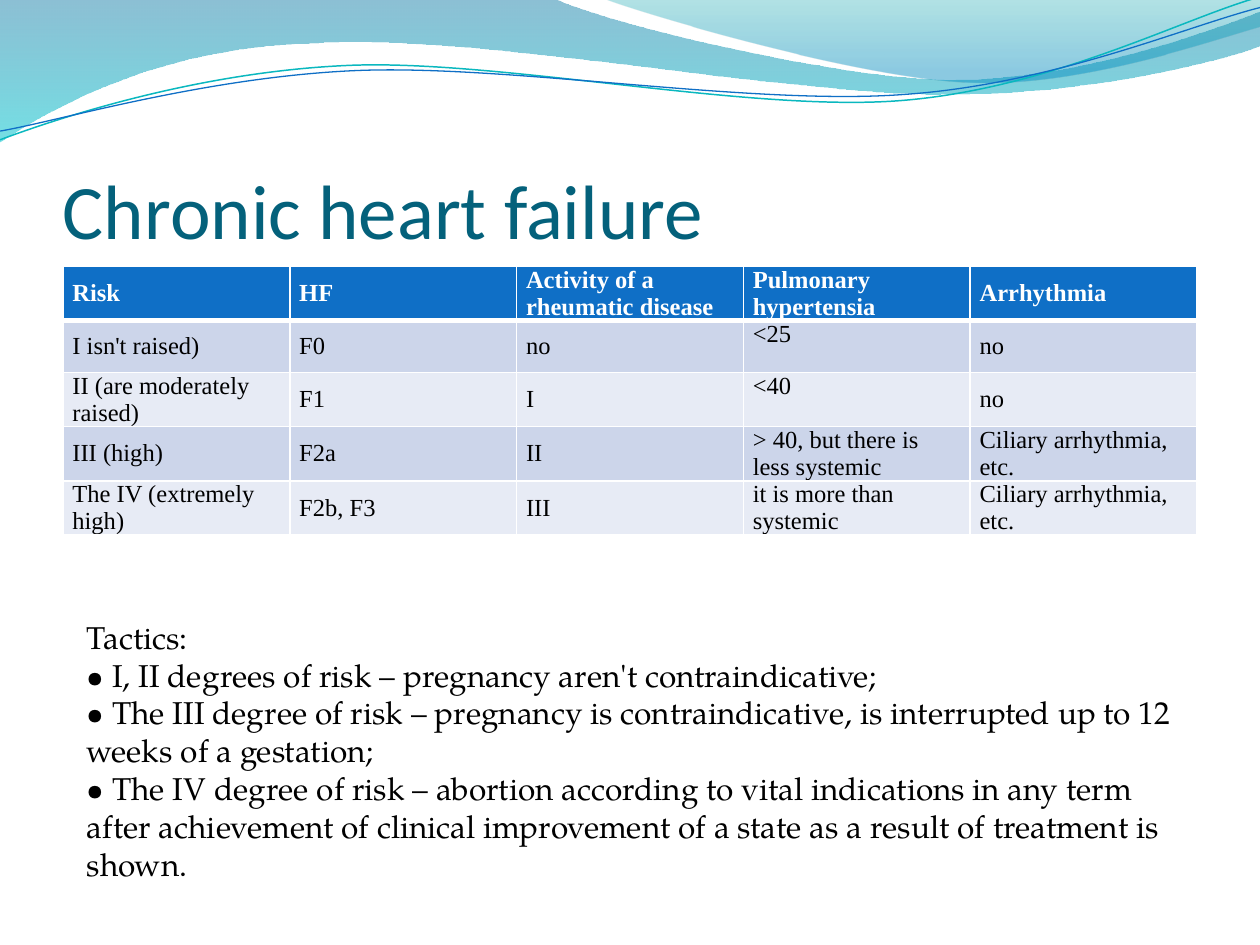
from dataclasses import dataclass

from lxml.etree import SubElement
from pptx import Presentation
from pptx.dml.color import RGBColor as Color
from pptx.enum.text import MSO_ANCHOR as Anchor, MSO_AUTO_SIZE as AutoSize
from pptx.oxml.ns import qn
from pptx.util import Pt


@dataclass(frozen=True)
class Theme:
    title_font: str = "Calibri"
    table_font: str = "Times New Roman"
    body_font: str = "TeX Gyre Pagella"
    title_size: int = 44
    table_size: int = 14
    body_size: int = 18
    title: str = "04617B"
    header: str = "0F6FC6"
    bands: tuple = ("CCD5EA", "E7EBF5")
    light: str = "FFFFFF"
    dark: str = "000000"
    teal_line: str = "0AB8BF"
    blue_line: str = "0F6FC6"
    wide_wave: tuple = ((0, "0074A1", 45), (1, "00C6CF", 55))
    corner_wave: tuple = ((0, "00A1A9", 30), (0.8, "008BBF", 45))


class SlideBuilder:
    """Draw styled elements on one slide, with lengths in points."""

    def __init__(self, slide, theme):
        self.slide = slide
        self.theme = theme

    def style(self, paragraph, name, size, color, bold=False):
        font = paragraph.font
        font.name, font.size, font.bold = name, Pt(size), bold
        font.color.rgb = Color.from_string(color)

    def outline(self, start, steps, close):
        points = [(Pt(step[i]), Pt(step[i + 1])) for step in steps
                  for i in range(0, len(step), 2)]
        builder = self.slide.shapes.build_freeform(*map(Pt, start))
        builder.add_line_segments(points, close=close)
        shape = builder.convert_to_shape()
        shape.shadow.inherit = False
        segments = iter(list(shape._element.spPr.iter(qn("a:lnTo"))))
        for step in steps:
            first, *others = [next(segments) for _ in range(len(step) // 2)]
            if others:
                first.tag = qn("a:cubicBezTo")
            for segment in others:
                first.append(segment[0])
                segment.getparent().remove(segment)
        return shape

    def wave(self, start, steps, stops):
        shape = self.outline(start, steps, True)
        shape.line.fill.background()
        shape.fill.gradient()
        shape.fill.gradient_angle = 270
        for stop, (position, color, _) in zip(shape.fill.gradient_stops, stops):
            stop.position = position
            stop.color.rgb = Color.from_string(color)
        colors = shape._element.spPr.iter(qn("a:srgbClr"))
        for element, (_, _, opacity) in zip(colors, stops):
            SubElement(element, qn("a:alpha"), val=str(opacity * 1000))

    def curve(self, start, steps, color, width):
        shape = self.outline(start, steps, False)
        shape.fill.background()
        shape.line.color.rgb = Color.from_string(color)
        shape.line.width = Pt(width)

    def text(self, box, lines, font, size, color, insets, anchor=Anchor.TOP, grow=False):
        frame = self.slide.shapes.add_textbox(*map(Pt, box)).text_frame
        frame.word_wrap = True
        frame.auto_size = AutoSize.SHAPE_TO_FIT_TEXT if grow else AutoSize.NONE
        frame.vertical_anchor = anchor
        (frame.margin_left, frame.margin_top,
         frame.margin_right, frame.margin_bottom) = map(Pt, insets)
        frame.text = "\n".join(lines)
        for paragraph in frame.paragraphs:
            self.style(paragraph, font, size, color)

    def borders(self, cell, top, bottom):
        properties = cell._tc.get_or_add_tcPr()
        for side, width in (("L", 1), ("R", 1), ("T", top), ("B", bottom)):
            line = SubElement(properties, qn(f"a:ln{side}"), w=str(Pt(width)))
            fill = SubElement(line, qn("a:solidFill"))
            SubElement(fill, qn("a:srgbClr"), val=self.theme.light)

    def table(self, box, rows, top_column):
        theme = self.theme
        shape = self.slide.shapes.add_table(len(rows), len(rows[0]), *map(Pt, box))
        for row_index, row in enumerate(rows):
            header = row_index == 0
            fill = theme.header if header else theme.bands[(row_index - 1) % 2]
            for column_index, value in enumerate(row):
                cell = shape.table.cell(row_index, column_index)
                self.borders(cell, 3 if row_index == 1 else 1, 3 if header else 1)
                cell.fill.solid()
                cell.fill.fore_color.rgb = Color.from_string(fill)
                cell.margin_left = cell.margin_right = Pt(5.4)
                cell.margin_top = cell.margin_bottom = 0
                cell.vertical_anchor = Anchor.TOP if column_index == top_column else Anchor.MIDDLE
                cell.text = value
                self.style(cell.text_frame.paragraphs[0], theme.table_font, theme.table_size,
                           theme.light if header else theme.dark, header)


RISKS = [
    ("Risk", "HF", "Activity of a rheumatic disease", "Pulmonary hypertensia", "Arrhythmia"),
    ("I isn't raised)", "F0", "no", "˂25", "no"),
    ("II (are moderately raised)", "F1", "I", "˂40", "no"),
    ("III (high)", "F2a", "II", "> 40, but there is less systemic", "Ciliary arrhythmia, etc."),
    ("The IV (extremely high)", "F2b, F3", "III", "it is more than systemic",
     "Ciliary arrhythmia, etc."),
]
TACTICS = [
    "Tactics:",
    "• I, II degrees of risk – pregnancy aren't contraindicative;",
    "• The III degree of risk – pregnancy is contraindicative, is interrupted up to 12 weeks "
    "of a gestation;",
    "• The IV degree of risk – abortion according to vital indications in any term after "
    "achievement of clinical improvement of a state as a result of treatment is shown.",
]


def main():
    presentation = Presentation()
    presentation.slide_width, presentation.slide_height = Pt(720), Pt(540)
    theme = Theme()
    builder = SlideBuilder(presentation.slides.add_slide(presentation.slide_layouts[6]), theme)
    builder.wave((0, 0), [
        (316.8, -0.7),
        (342.7, 12.2, 478.1, 45.4, 545.8, 45.4),
        (614.2, 45.4, 689.8, 18.7, 720, 6.5),
        (720.7, 25.9),
        (707.8, 31.7, 626.4, 54.7, 537.1, 54),
        (447.8, 54, 275, 20.2, 185, 24.5),
        (92.9, 25.9, 33.1, 59.8, -0.7, 81.4),
    ], theme.wide_wave)
    builder.wave((344.9, -0.7), [
        (366.5, 7.9, 491, 44.6, 553.7, 46.8),
        (616.3, 49.7, 691.9, 23, 720, 15.1),
        (720, 0),
    ], theme.corner_wave)
    builder.curve((0, 79.9), [
        (34.6, 67, 113.8, 41, 199.4, 37.4),
        (284.4, 33.8, 427, 64.1, 513.4, 57.6),
        (599.8, 51.1, 675.4, 10.8, 718.6, -1.4),
    ], theme.teal_line, 0.85)
    builder.curve((0, 74.9), [
        (33.8, 69.1, 118.1, 43.9, 203.8, 40.3),
        (290.2, 36.7, 429.8, 60.5, 516.2, 54),
        (601.9, 48.2, 677.5, 15.1, 720, 4.3),
    ], theme.blue_line, 0.75)
    builder.text((36, 55.5, 648, 90), ["Chronic heart failure"], theme.title_font,
                 theme.title_size, theme.title, (0, 3.6, 0, 0), Anchor.BOTTOM)
    builder.table((36, 152.3, 648, 147.5), RISKS, top_column=3)
    builder.text((42.5, 349.5, 641, 138.2), TACTICS, theme.body_font,
                 theme.body_size, theme.dark, (7.2, 3.6, 7.2, 3.6), grow=True)
    presentation.save("out.pptx")


if __name__ == "__main__":
    main()
